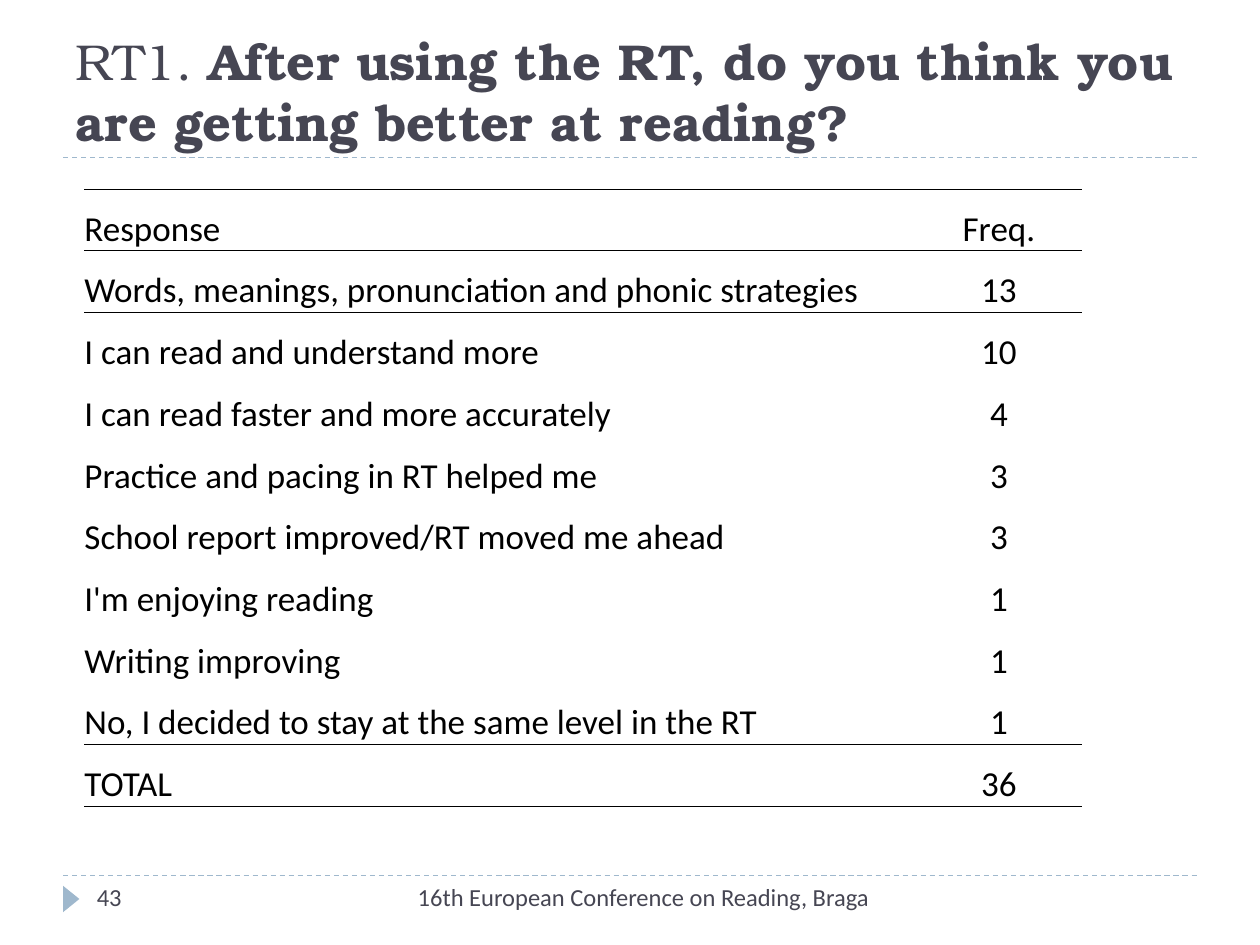
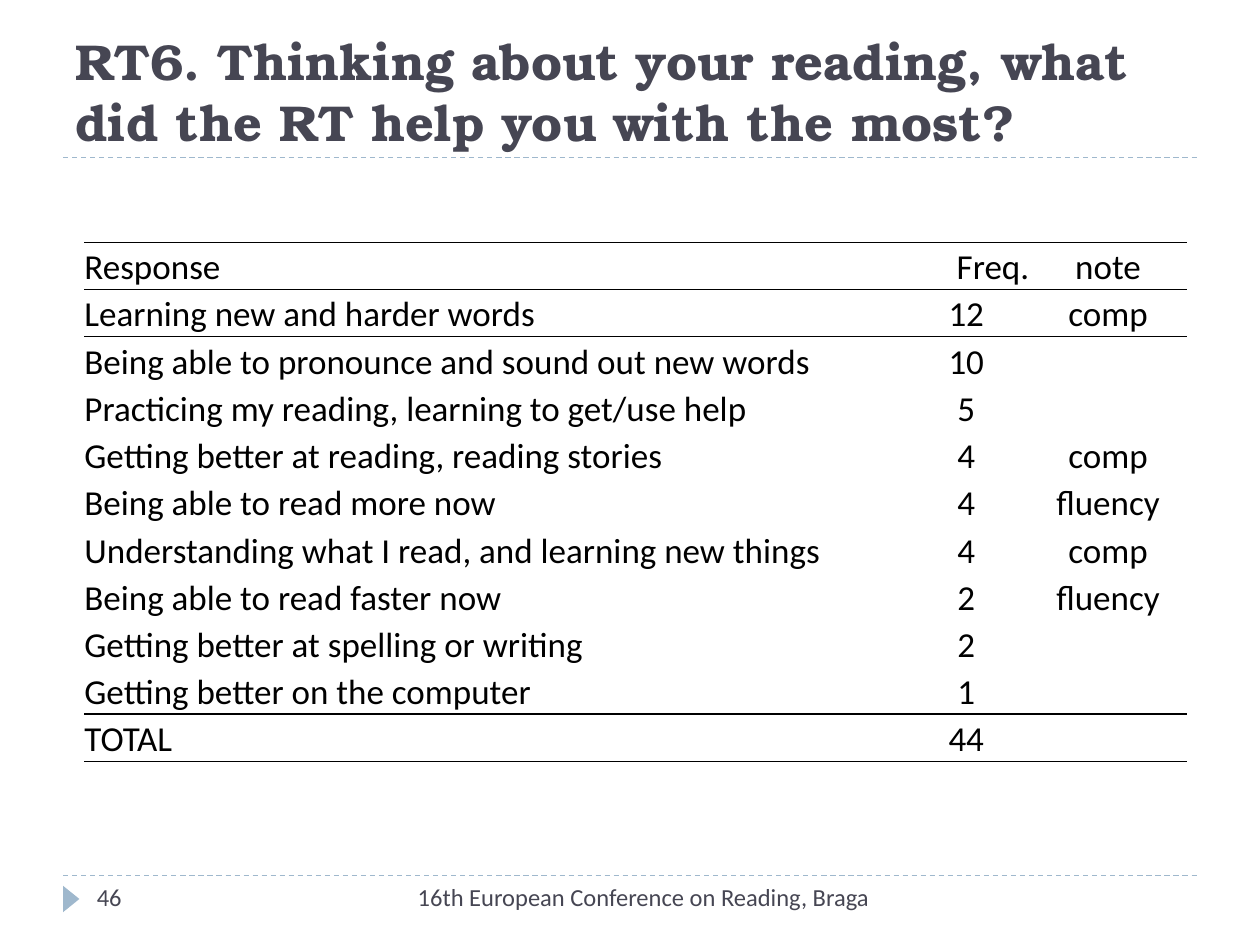
from lxml.etree import SubElement
from pptx import Presentation
from pptx.dml.color import RGBColor
from pptx.enum.dml import MSO_LINE
from pptx.enum.shapes import MSO_CONNECTOR, MSO_SHAPE
from pptx.enum.text import MSO_ANCHOR, MSO_AUTO_SIZE, PP_ALIGN
from pptx.oxml.ns import qn
from pptx.util import Inches, Pt

SLATE = RGBColor(0x46, 0x46, 0x53)
STEEL = RGBColor(0x9F, 0xB8, 0xCD)
BLACK = RGBColor(0, 0, 0)
TITLE_FONT, BODY_FONT = "TeX Gyre Bonum", "Calibri"
NO_STYLE = "{2D5ABB26-0587-4C30-8999-92F81FD0307C}"
FOOTER = "16th European Conference on Reading, Braga"
MARGIN, TITLE_TOP, TITLE_H = 0.5, 0.25, 1
CONTENT_W = 10 - 2 * MARGIN
TABLE_LEFT, FOOTER_TOP = 0.67, 6.95
THIN, MEDIUM = 0.5, 1

# Each row: columns the label spans, label, then the values of the last columns
BETTER_ROWS = [
    (1, "Response", "Freq."),
    (5, "Words, meanings, pronunciation and phonic strategies", "13"),
    (3, "I can read and understand more", "10"),
    (4, "I can read faster and more accurately", "4"),
    (4, "Practice and pacing in RT helped me", "3"),
    (5, "School report improved/RT moved me ahead", "3"),
    (2, "I'm enjoying reading", "1"),
    (2, "Writing improving", "1"),
    (5, "No, I decided to stay at the same level in the RT", "1"),
    (5, "TOTAL", "36"),
]
HELP_ROWS = [
    (1, "Response", "Freq.", "note"),
    (3, "Learning new and harder words", "12", "comp"),
    (5, "Being able to pronounce and sound out new words", "10", ""),
    (5, "Practicing my reading, learning to get/use help", "5", ""),
    (4, "Getting better at reading, reading stories", "4", "comp"),
    (3, "Being able to read more now", "4", "fluency"),
    (5, "Understanding what I read, and learning new things", "4", "comp"),
    (3, "Being able to read faster now", "2", "fluency"),
    (4, "Getting better at spelling or writing", "2", ""),
    (3, "Getting better on the computer", "1", ""),
    (3, "TOTAL", "44", ""),
]


def style_run(r, font, size, color, bold=False):
    r.font.name, r.font.size, r.font.bold = font, Pt(size), bold
    r.font.color.rgb = color


def add_dashed_rule(s, y):
    line = s.shapes.add_connector(MSO_CONNECTOR.STRAIGHT, Inches(MARGIN), Inches(y),
                                  Inches(MARGIN + CONTENT_W), Inches(y))
    line.line.color.rgb = STEEL
    line.line.width = Pt(0.75)
    line.line.dash_style = MSO_LINE.DASH
    SubElement(line._element.spPr, qn("a:effectLst"))


def add_page_marker(s):
    sp = s.shapes.add_shape(MSO_SHAPE.ISOSCELES_TRIANGLE, Inches(0.46), Inches(7.07),
                            Inches(0.21), Inches(0.13))
    sp.rotation = 90
    sp.shadow.inherit = False
    sp.fill.solid()
    sp.fill.fore_color.rgb = STEEL
    sp.line.fill.background()


def add_footer_text(s, text, left, width, align):
    sp = s.shapes.add_textbox(Inches(left), Inches(FOOTER_TOP), Inches(width), Inches(0.4))
    tf = sp.text_frame
    tf.word_wrap = True
    tf.text = text
    p = tf.paragraphs[0]
    p.alignment = align
    style_run(p.runs[0], BODY_FONT, 14, SLATE)


def set_title(s, parts):
    """Fill the title with (text, bold) parts."""
    sp = s.shapes.title
    sp.left, sp.top = Inches(MARGIN), Inches(TITLE_TOP)
    sp.width, sp.height = Inches(CONTENT_W), Inches(TITLE_H)
    tf = sp.text_frame
    tf.auto_size = MSO_AUTO_SIZE.NONE
    tf.word_wrap = True
    tf.vertical_anchor = MSO_ANCHOR.BOTTOM
    p = tf.paragraphs[0]
    p.alignment = PP_ALIGN.LEFT
    for text, bold in parts:
        r = p.add_run()
        r.text = text
        style_run(r, TITLE_FONT, 28.8, SLATE, bold)


def add_border(cell, side, width):
    ln = SubElement(cell._tc.get_or_add_tcPr(), qn(f"a:ln{side}"), w=str(Pt(width)))
    fill = SubElement(ln, qn("a:solidFill"))
    SubElement(fill, qn("a:srgbClr"), val=str(BLACK))


def row_borders(row, count):
    """Top and bottom border widths: ruled header and total, open rows between."""
    total = count - 1
    top = {0: THIN, 1: THIN, total: MEDIUM}.get(row)
    bottom = {0: THIN, total - 1: MEDIUM, total: THIN}.get(row)
    return (("T", top), ("B", bottom))


def write_cell(cell, text, align):
    cell.text = text
    p = cell.text_frame.paragraphs[0]
    p.alignment = align
    for r in p.runs:
        style_run(r, BODY_FONT, 20, BLACK)


def add_response_table(s, rows, top, col_widths, row_height, freq_align):
    frame = s.shapes.add_table(len(rows), len(col_widths), Inches(TABLE_LEFT), Inches(top),
                               Inches(sum(col_widths)), Inches(row_height * len(rows)))
    table = frame.table
    table.first_row = table.horz_banding = False
    table._tbl.tblPr.find(qn("a:tableStyleId")).text = NO_STYLE
    for column, width in zip(table.columns, col_widths):
        column.width = Inches(width)
    for i, (span, label, *values) in enumerate(rows):
        table.rows[i].height = Inches(row_height)
        for cell in table.rows[i].cells:
            cell.margin_left = cell.margin_right = cell.margin_top = cell.margin_bottom = 0
            cell.vertical_anchor = MSO_ANCHOR.BOTTOM
            for side, width in row_borders(i, len(rows)):
                if width:
                    add_border(cell, side, width)
            cell.fill.background()
        if span > 1:
            table.cell(i, 0).merge(table.cell(i, span - 1))
        write_cell(table.cell(i, 0), label, PP_ALIGN.LEFT)
        first_value = len(col_widths) - len(values)
        for j, value in enumerate(values, first_value):
            write_cell(table.cell(i, j), value, PP_ALIGN.CENTER)
    table.cell(0, first_value).text_frame.paragraphs[0].alignment = freq_align


def add_survey_slide(prs, number, title_parts):
    s = prs.slides.add_slide(prs.slide_layouts[5])
    for y in (FOOTER_TOP, TITLE_TOP + TITLE_H):
        add_dashed_rule(s, y)
    add_page_marker(s)
    set_title(s, title_parts)
    add_footer_text(s, str(number), TABLE_LEFT, 2.17, PP_ALIGN.LEFT)
    add_footer_text(s, FOOTER, 3.17, 3.83, PP_ALIGN.RIGHT)
    return s


def main():
    prs = Presentation()
    prs.slide_width, prs.slide_height = Inches(10), Inches(7.5)

    s = add_survey_slide(prs, 43, [
        ("RT1. ", False),
        ("After using the RT, do you think you are getting better at reading?", True)])
    add_response_table(s, BETTER_ROWS, 1.5, [1.32] * 6, 0.49, PP_ALIGN.CENTER)

    s = add_survey_slide(prs, 46, [
        ("RT6. Thinking about your reading, what did the RT help you with the most?", True)])
    add_response_table(s, HELP_ROWS, 1.92, [1.29] * 4 + [1.34, 1, 1.25], 0.375, PP_ALIGN.RIGHT)

    prs.save("out.pptx")


if __name__ == "__main__":
    main()
